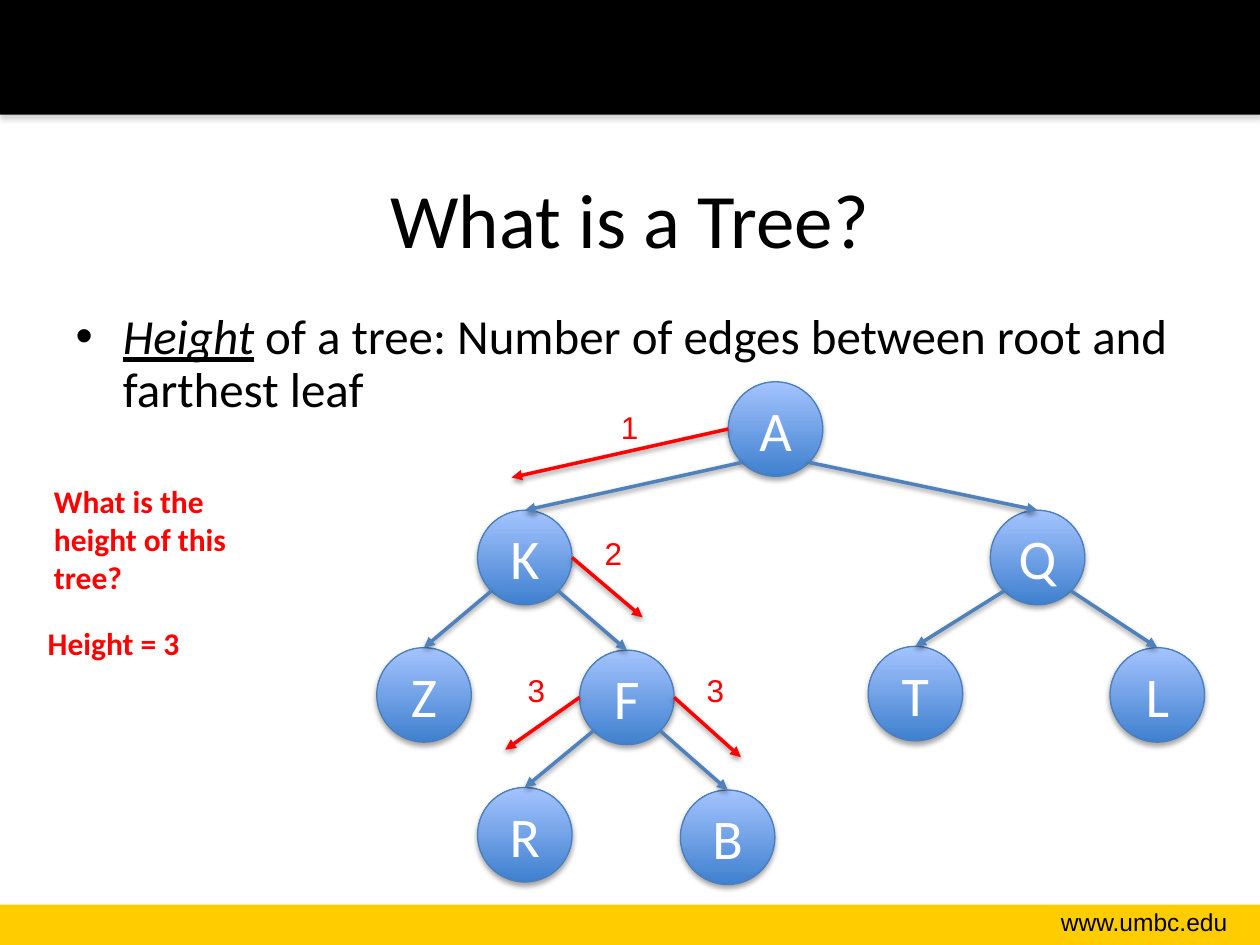
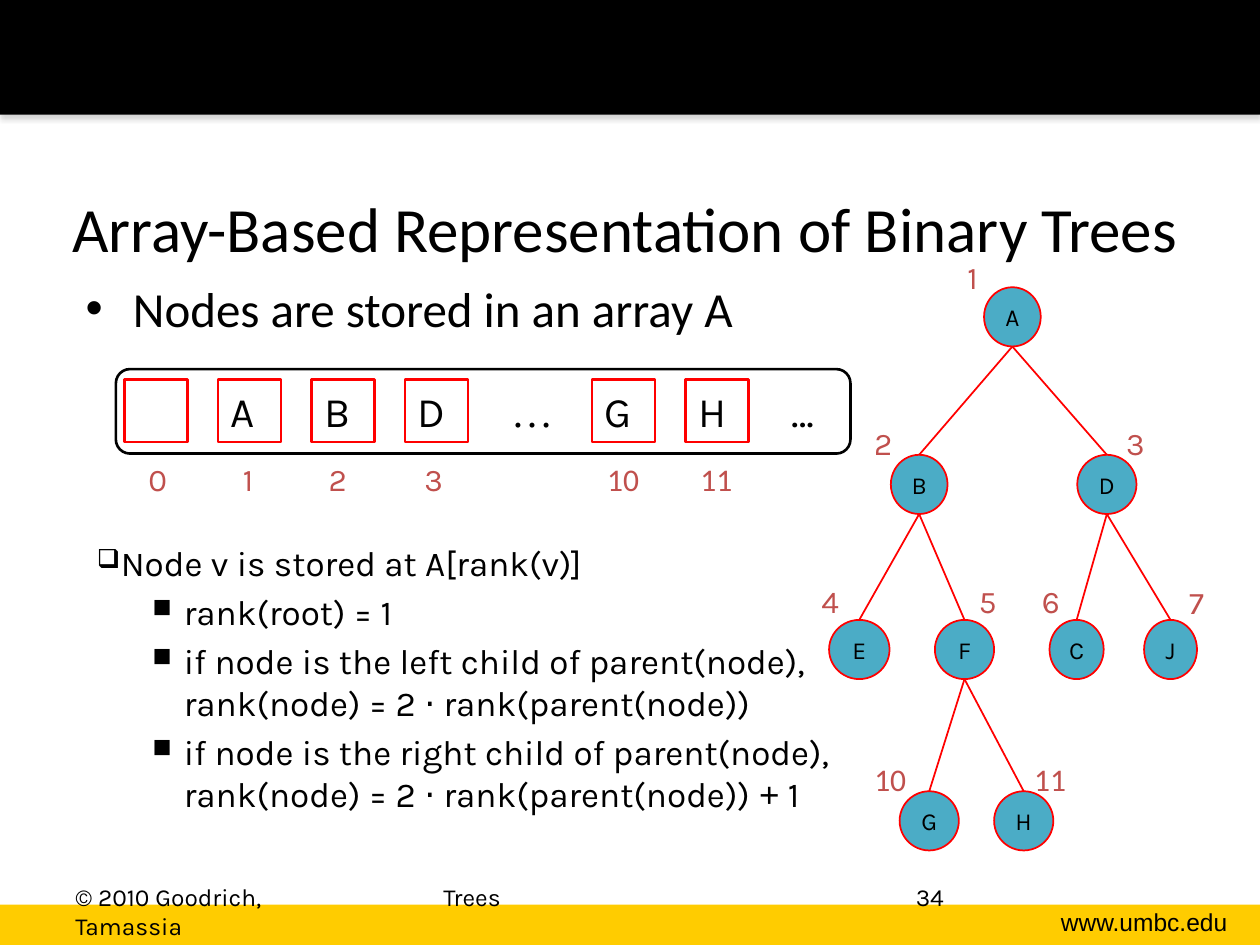
from lxml.etree import SubElement
from pptx import Presentation
from pptx.dml.color import RGBColor
from pptx.enum.shapes import MSO_CONNECTOR, MSO_SHAPE
from pptx.enum.text import MSO_ANCHOR, MSO_AUTO_SIZE, PP_ALIGN
from pptx.oxml.ns import qn
from pptx.util import Inches, Pt

COLORS = {
    "black": "000000",
    "white": "FFFFFF",
    "gold": "FFCC00",
    "gray": "808080",
    "red": "FF0000",
    "rank": "C0504D",
    "edge": "4F81BD",
    "node_line": "4B7EBC",
    "node_dark": "3F80CE",
    "node_light": "A4C4FF",
    "teal": "4BACC6",
}
CIRCLE = 0.75
DIAGONAL = 0.265
NODE_HEIGHT = 0.47
CELL = 0.5
CELL_PITCH = 0.742


def rgb(name):
    return RGBColor.from_string(COLORS[name])


def set_shadow(shape, color=None, opacity=35, distance=1.8):
    effects = SubElement(shape._element.spPr, qn("a:effectLst"))
    if color:
        shadow = SubElement(effects, qn("a:outerShdw"), blurRad=str(Pt(3.1)),
                            dist=str(Pt(distance)), dir="5400000", rotWithShape="0")
        tint = SubElement(shadow, qn("a:srgbClr"), val=COLORS[color])
        SubElement(tint, qn("a:alpha"), val=str(opacity * 1000))


def add_run(paragraph, text, size, font="Calibri", color="black", bold=None):
    run = paragraph.add_run()
    run.text = text
    run.font.size = Pt(size)
    run.font.name = font
    run.font.bold = bold
    run.font.color.rgb = rgb(color)
    return run


def add_text(slide, box, text, size, font="Calibri", color="black", bold=None,
             align=PP_ALIGN.LEFT, wrap=True):
    shape = slide.shapes.add_textbox(*map(Inches, box))
    shape.text_frame.word_wrap = wrap
    paragraph = shape.text_frame.paragraphs[0]
    paragraph.alignment = align
    add_run(paragraph, text, size, font, color, bold)


def add_box(slide, kind, box, fill=None, line=None, width=1.0, shadow=None):
    shape = slide.shapes.add_shape(kind, *map(Inches, box))
    if fill:
        shape.fill.solid()
        shape.fill.fore_color.rgb = rgb(fill)
    else:
        shape.fill.background()
    if line:
        shape.line.color.rgb = rgb(line)
        shape.line.width = Pt(width)
    else:
        shape.line.fill.background()
    set_shadow(shape, shadow)
    return shape


def label_shape(shape, text, size, font, color, align):
    frame = shape.text_frame
    frame.vertical_anchor = MSO_ANCHOR.MIDDLE
    frame.word_wrap = align == PP_ALIGN.LEFT
    frame.paragraphs[0].alignment = align
    add_run(frame.paragraphs[0], text, size, font, color)


def add_line(slide, start, end, color, width, arrow=False, child=None):
    connector = slide.shapes.add_connector(
        MSO_CONNECTOR.STRAIGHT, *map(Inches, (*start, *end)))
    if child is not None:
        connector.end_connect(child, 0)
    connector.line.color.rgb = rgb(color)
    connector.line.width = Pt(width)
    if arrow:
        SubElement(connector.line._get_or_add_ln(), qn("a:tailEnd"), type="triangle")
        set_shadow(connector, "black", 38, 1.6)
    else:
        set_shadow(connector)


def place(placeholder, box):
    placeholder.left, placeholder.top, placeholder.width, placeholder.height = map(Inches, box)
    placeholder.text_frame.auto_size = MSO_AUTO_SIZE.NONE
    return placeholder.text_frame.paragraphs[0]


def add_framed_slide(presentation, title, title_box, title_size, body_box):
    slide = presentation.slides.add_slide(presentation.slide_layouts[1])
    add_box(slide, MSO_SHAPE.RECTANGLE, (0, 7.18, 10, 0.32), "gold")
    add_box(slide, MSO_SHAPE.RECTANGLE, (0, 0, 10, 0.91), "black", shadow="gray")
    add_text(slide, (7.85, 7.15, 1.99, 0.34), "www.umbc.edu", 14, "Arial",
             align=PP_ALIGN.RIGHT)
    add_run(place(slide.shapes.title, title_box), title, title_size)
    body = place(slide.placeholders[1], body_box)
    body.space_before = Pt(0)
    return slide, body


def add_circle_node(slide, name, left, top):
    shape = add_box(slide, MSO_SHAPE.OVAL, (left, top, CIRCLE, CIRCLE), None,
                    "node_line", 0.75, "black")
    shape.fill.gradient()
    shape.fill.gradient_angle = 90
    for stop, color in zip(shape.fill.gradient_stops, ("node_dark", "node_light")):
        stop.color.rgb = rgb(color)
    label_shape(shape, name, 32, "Calibri", "white", PP_ALIGN.CENTER)
    return shape


def add_tree_height_slide(presentation):
    slide, body = add_framed_slide(presentation, "What is a Tree?", (0.5, 1.1, 9, 1.25), 44,
                                   (0.5, 2.43, 9, 0.9))
    body.line_spacing = 0.9
    term = add_run(body, "Height", 28)
    term.font.italic = term.font.underline = True
    add_run(body, " of a tree: Number of edges between root and farthest leaf", 28)

    nodes = {
        "A": (5.78, 3.03), "K": (3.79, 4.05), "Q": (7.86, 4.05), "Z": (2.99, 5.14),
        "F": (4.6, 5.16), "T": (6.89, 5.13), "L": (8.81, 5.14), "R": (3.79, 6.25),
        "B": (5.4, 6.27),
    }
    circles = {name: add_circle_node(slide, name, *corner) for name, corner in nodes.items()}
    for parent, children in {"A": "KQ", "K": "ZF", "Q": "TL", "F": "RB"}.items():
        left, top = nodes[parent]
        for child, side in zip(children, (-1, 1)):
            start = (left + CIRCLE / 2 + side * DIAGONAL, top + CIRCLE / 2 + DIAGONAL)
            child_left, child_top = nodes[child]
            add_line(slide, start, (child_left + CIRCLE / 2, child_top), "edge", 2, True,
                     circles[child])

    steps = [
        ("1", "A", 0, (4.06, 3.79), (4.83, 3.19)),
        ("2", "K", CIRCLE, (5.1, 4.9), (4.7, 4.19)),
        ("3", "F", CIRCLE, (5.88, 6.01), (5.51, 5.28)),
        ("3", "F", 0, (4.01, 5.95), (4.09, 5.28)),
    ]
    for count, name, side, end, label in steps:
        left, top = nodes[name]
        add_line(slide, (left + side, top + CIRCLE / 2), end, "red", 2, True)
        add_text(slide, (*label, 0.34, 0.4), count, 18, "Arial", "red", wrap=False)

    add_text(slide, (0.33, 3.78, 1.92, 1.01), "What is the height of this tree?", 18,
             color="red", bold=True)
    add_text(slide, (0.28, 4.9, 1.92, 0.4), "Height = 3", 18, color="red", bold=True)


def add_rank(slide, rank, left, top):
    wide = len(rank) > 1
    add_text(slide, (left, top, 0.48 if wide else 0.34, 0.4), rank, 18,
             "Calibri" if wide else "Karla", "rank", wrap=False)


def add_array(slide):
    add_box(slide, MSO_SHAPE.ROUNDED_RECTANGLE, (0.92, 2.93, 5.83, 0.67), None, "black", 1.5)
    for index, value in enumerate(["", "A", "B", "D", "…", "G", "H", "…"]):
        box = (0.99 + index * CELL_PITCH, 3.01, CELL, CELL)
        if value == "…":
            font = "Times New Roman" if index == 4 else "Karla"
            add_text(slide, box, value, 24, font, wrap=False)
            continue
        cell = add_box(slide, MSO_SHAPE.RECTANGLE, box, None, "red", 1.5)
        if value:
            label_shape(cell, value, 24, "Karla", "black", PP_ALIGN.LEFT)
    ranks = {"0": 1.08, "1": 1.83, "2": 2.51, "3": 3.27, "10": 4.72, "11": 5.46}
    for rank, left in ranks.items():
        add_rank(slide, rank, left, 3.6)


def add_ranked_tree(slide):
    nodes = {
        "A": (7.81, 2.28, 0.45), "B": (7.07, 3.61, 0.45), "D": (8.55, 3.61, 0.47),
        "E": (6.58, 4.92, 0.48), "F": (7.42, 4.92, 0.47), "C": (8.33, 4.92, 0.43),
        "J": (9.08, 4.92, 0.42), "G": (7.14, 6.28, 0.47), "H": (7.89, 6.28, 0.47),
    }
    ovals = {}
    for name, (left, top, width) in nodes.items():
        ovals[name] = add_box(slide, MSO_SHAPE.OVAL, (left, top, width, NODE_HEIGHT),
                              "teal", "red")
        label_shape(ovals[name], name, 14, "Karla", "black", PP_ALIGN.CENTER)
    for parent, children in {"A": "BD", "B": "EF", "D": "CJ", "F": "GH"}.items():
        left, top, width = nodes[parent]
        start = (left + width / 2, top + NODE_HEIGHT)
        for child in children:
            child_left, child_top, child_width = nodes[child]
            add_line(slide, start, (child_left + child_width / 2, child_top), "red", 1,
                     child=ovals[child])
    ranks = {
        "1": (7.58, 2), "2": (6.84, 3.32), "3": (8.84, 3.32), "4": (6.42, 4.57),
        "5": (7.67, 4.57), "6": (8.17, 4.57), "7": (9.34, 4.58), "10": (6.84, 5.98),
        "11": (8.11, 5.98),
    }
    for rank, corner in ranks.items():
        add_rank(slide, rank, *corner)


def set_bullet(paragraph, character, margin, hanging):
    properties = paragraph._p.get_or_add_pPr()
    properties.set("marL", str(Inches(margin)))
    properties.set("indent", str(-Inches(hanging)))
    color = SubElement(properties, qn("a:buClr"))
    SubElement(color, qn("a:srgbClr"), val=COLORS["black"])
    SubElement(properties, qn("a:buSzPct"), val="75000")
    SubElement(properties, qn("a:buChar"), char=character)


def add_rank_rules(slide):
    rules = [
        ["Node v is stored at A[rank(v)]"],
        ["rank(root) = 1"],
        ["if node is the left child of parent(node),", "rank(node) = 2 ⋅ rank(parent(node))"],
        ["if node is the right child of parent(node),",
         "rank(node) = 2 ⋅ rank(parent(node)) "],
    ]
    frame = slide.shapes.add_textbox(*map(Inches, (0.67, 4.25, 6.58, 2.33))).text_frame
    frame.word_wrap = True
    for index, lines in enumerate(rules):
        paragraph = frame.add_paragraph() if index else frame.paragraphs[0]
        paragraph.space_before = Pt(4 if index else 0)
        if index:
            paragraph.level = 1
            set_bullet(paragraph, "■", 0.69, 0.25)
        else:
            set_bullet(paragraph, "❑", 0.19, 0.19)
        for number, line in enumerate(lines):
            if number:
                paragraph.add_line_break()
            add_run(paragraph, line, 20, "Karla")
    add_run(paragraph, "+", 20, "Arial")
    add_run(paragraph, " 1", 20, "Karla")


def add_array_slide(presentation):
    slide, body = add_framed_slide(presentation, "Array-Based Representation of Binary Trees",
                                   (0.46, 1.18, 9, 1.25), 36, (0.58, 2.16, 8.5, 0.67))
    add_run(body, "Nodes are stored in an array A", 28)
    add_array(slide)
    add_ranked_tree(slide)
    add_rank_rules(slide)
    footers = [("© 2010 Goodrich, Tamassia", 0.5, 2.33), ("Trees", 3.42, 3.17),
               ("34", 7.17, 2.33)]
    for text, left, width in footers:
        add_text(slide, (left, 6.95, width, 0.4), text, 14, "Karla")


def main():
    presentation = Presentation()
    presentation.slide_width = Inches(10)
    presentation.slide_height = Inches(7.5)
    add_tree_height_slide(presentation)
    add_array_slide(presentation)
    presentation.save("out.pptx")


if __name__ == "__main__":
    main()
